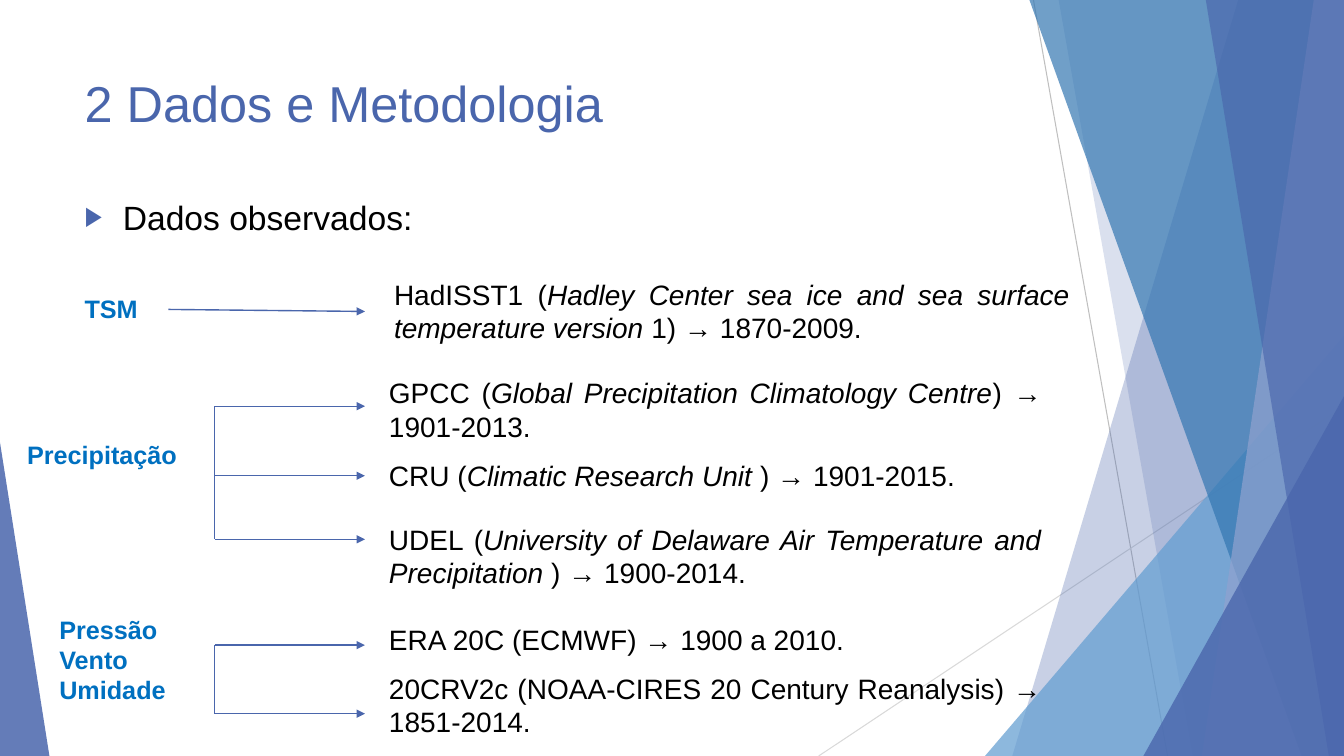
import pptx
import pptx.dml.color
import pptx.enum.shapes
import pptx.enum.text
import pptx.oxml
import pptx.oxml.ns
import pptx.util

Inches = pptx.util.Inches
Align = pptx.enum.text.PP_ALIGN
Fit = pptx.enum.text.MSO_AUTO_SIZE
HUES = {"main": "4A66AC", "label": "0070C0", "text": "000000", "sky": "629DD1",
        "sea": "3477B2", "pale": "90A2CF", "gray": "BFBFBF", "light": "D9D9D9"}
WIDE, HIGH = 13.33, 7.5


def tag(name, **attrs):
    node = pptx.oxml.parse_xml(f"<a:{name} {pptx.oxml.ns.nsdecls('a')}/>")
    for key, val in attrs.items():
        node.set(key, str(val))
    return node


class Deck:
    """Draws styled elements on the current slide."""

    font = "Arial"

    def __init__(self):
        self.prs = pptx.Presentation()
        self.prs.slide_width, self.prs.slide_height = Inches(WIDE), Inches(HIGH)
        self.slide = self.prs.slides.add_slide(self.prs.slide_layouts[5])
        self.shapes = self.slide.shapes

    def hue(self, name):
        return pptx.dml.color.RGBColor.from_string(HUES[name])

    def style(self, run, size, hue, bold=False, slant=False):
        font = run.font
        font.name, font.size = self.font, pptx.util.Pt(size)
        font.bold, font.italic = bold, slant
        font.color.rgb = self.hue(hue)

    def paint(self, shape, hue, alpha):
        shape.shadow.inherit = False
        shape.line.fill.background()
        shape.fill.solid()
        shape.fill.fore_color.rgb = self.hue(hue)
        color = shape.fill._xPr.find(".//" + pptx.oxml.ns.qn("a:srgbClr"))
        color.append(tag("alpha", val=alpha * 1000))

    def facet(self, points, hue, alpha):
        spots = [(Inches(x), Inches(y)) for x, y in points]
        form = self.shapes.build_freeform(*spots[0], scale=1.0)
        form.add_line_segments(spots[1:], close=True)
        self.paint(form.convert_to_shape(), hue, alpha)

    def wedge(self, left, top, width, apex, hue, alpha):
        kind = pptx.enum.shapes.MSO_SHAPE.ISOSCELES_TRIANGLE
        shape = self.shapes.add_shape(kind, Inches(left), Inches(top),
                                      Inches(width), Inches(HIGH - top))
        shape.adjustments[0] = apex
        self.paint(shape, hue, alpha)

    def line(self, start, end, hue="main", width=1, arrow=False):
        kind = pptx.enum.shapes.MSO_CONNECTOR.STRAIGHT
        link = self.shapes.add_connector(kind, *map(Inches, start + end))
        link.line.color.rgb = self.hue(hue)
        link.line.width = pptx.util.Pt(width)
        if arrow:
            link.line._get_or_add_ln().append(tag("tailEnd", type="triangle"))
        link._element.spPr.append(tag("effectLst"))

    def title(self, text, box):
        shape = self.shapes.title
        shape.left, shape.top, shape.width, shape.height = map(Inches, box)
        frame = shape.text_frame
        frame.text = text
        frame.word_wrap, frame.auto_size = True, Fit.NONE
        frame.vertical_anchor = pptx.enum.text.MSO_ANCHOR.TOP
        frame.paragraphs[0].alignment = Align.LEFT
        self.style(frame.paragraphs[0].runs[0], 36, "main")

    def frame(self, box, wrap=True, fit=Fit.SHAPE_TO_FIT_TEXT):
        frame = self.shapes.add_textbox(*map(Inches, box)).text_frame
        frame.word_wrap, frame.auto_size = wrap, fit
        return frame

    def bullet(self, text, box):
        frame = self.frame(box, fit=Fit.NONE)
        frame.text = text
        para = frame.paragraphs[0]
        para.space_before = pptx.util.Pt(10)
        self.style(para.runs[0], 24, "text")
        props = para._p.get_or_add_pPr()
        props.set("marL", str(Inches(0.38)))
        props.set("indent", str(-Inches(0.38)))
        color = tag("buClr")
        color.append(tag("srgbClr", val=HUES["main"]))
        props.extend([color, tag("buSzPct", val=80000),
                      tag("buFont", typeface=self.font), tag("buChar", char="▶")])

    def label(self, text, box):
        frame = self.frame(box, wrap=False)
        frame.text = text
        for para in frame.paragraphs:
            self.style(para.runs[0], 18, "label", bold=True)

    def source(self, parts, box):
        para = self.frame(box).paragraphs[0]
        para.alignment = Align.JUSTIFY
        for i, part in enumerate(parts):
            run = para.add_run()
            run.text = part
            self.style(run, 20, "text", slant=i % 2 == 1)

    def fork(self, rows):
        self.line((2.13, rows[0]), (2.13, rows[-1]))
        for row in rows:
            self.line((2.13, row), (3.62, row), arrow=True)


def main():
    deck = Deck()
    deck.line((10.25, 0), (11.58, HIGH), "gray", 0.75)
    deck.line((WIDE, 4.03), (8.12, HIGH), "light", 0.75)

    def band(top, foot, hue, alpha):
        deck.facet([(top, 0), (WIDE, 0), (WIDE, HIGH), (foot, HIGH)], hue, alpha)

    band(12.28, 10.04, "main", 30)
    band(10.5, 11.83, "main", 20)
    deck.wedge(9.77, 3.33, 3.56, 1, "sky", 72)
    band(10.21, 12.91, "sea", 70)
    band(13.03, 11.92, "pale", 70)
    band(11.96, 13.18, "main", 65)
    deck.wedge(11.34, 3.93, 1.99, 1, "main", 80)
    deck.wedge(0, 4.39, 0.49, 0, "main", 85)

    deck.title("2 Dados e Metodologia", (0.74, 0.67, 9.4, 1.44))
    deck.bullet("Dados observados:", (0.74, 1.9, 9.4, 4.7))

    deck.label("TSM", (0.74, 2.86, 0.73, 0.4))
    deck.label("Precipitação", (0.17, 4.31, 1.7, 0.4))
    deck.label("Pressão\nVento\nUmidade", (0.49, 6.04, 1.27, 1.01))

    deck.line((1.67, 3.07), (3.62, 3.09), arrow=True)
    deck.fork([4.03, 4.72, 5.35])
    deck.fork([6.4, 7.08])

    deck.source(["HadISST1 (", "Hadley Center sea ice and sea surface temperature version ",
                 "1) → 1870-2009."], (3.81, 2.7, 6.9, 0.77))
    sources = [
        (3.68, 0.77, ["GPCC (", "Global Precipitation Climatology Centre", ") → 1901-2013."]),
        (4.5, 0.44, ["CRU (", "Climatic Research Unit ", ") → 1901-2015."]),
        (5.13, 0.77, ["UDEL (", "University of Delaware Air Temperature and Precipitation ",
                      ") → 1900-2014."]),
        (6.13, 0.44, ["ERA 20C (ECMWF) → 1900 a 2010."]),
        (6.61, 0.77, ["20CRV2c (NOAA-CIRES 20 Century Reanalysis) → 1851-2014."]),
    ]
    for top, height, parts in sources:
        deck.source(parts, (3.76, top, 6.67, height))
    deck.prs.save("out.pptx")


if __name__ == "__main__":
    main()
